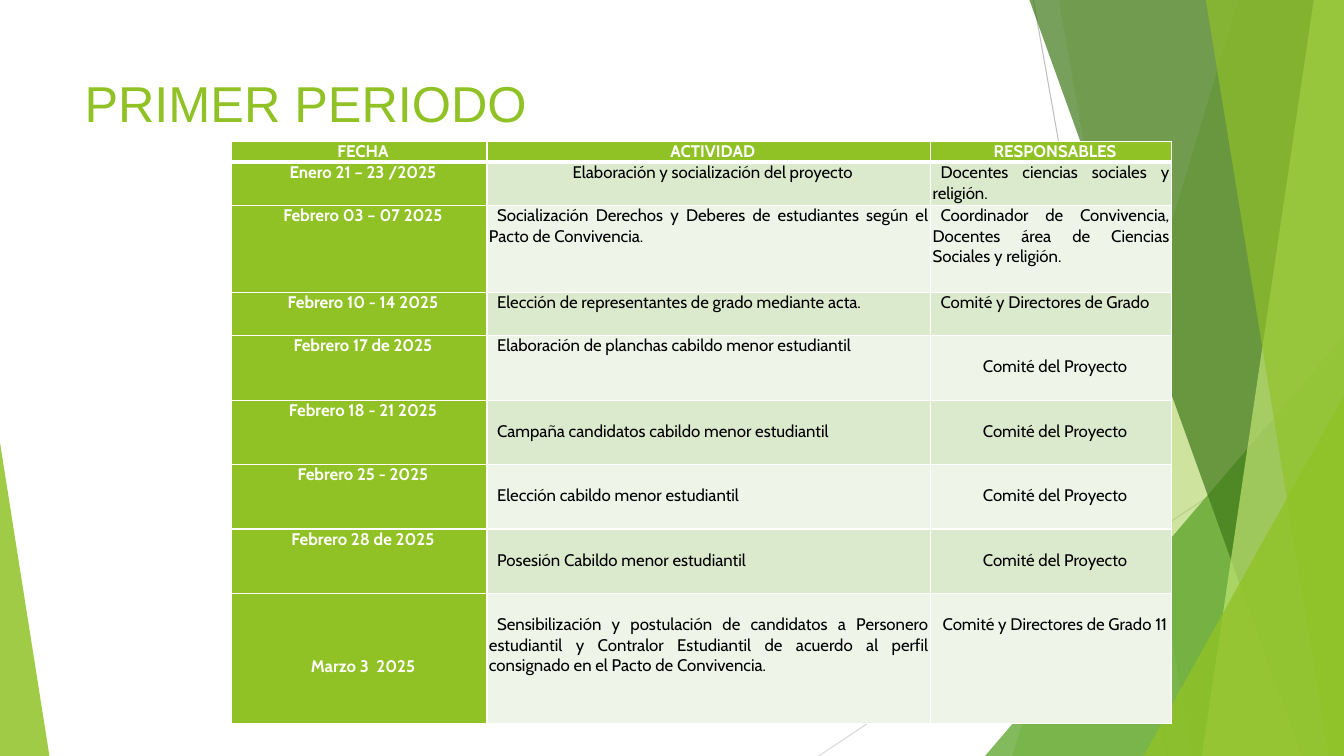
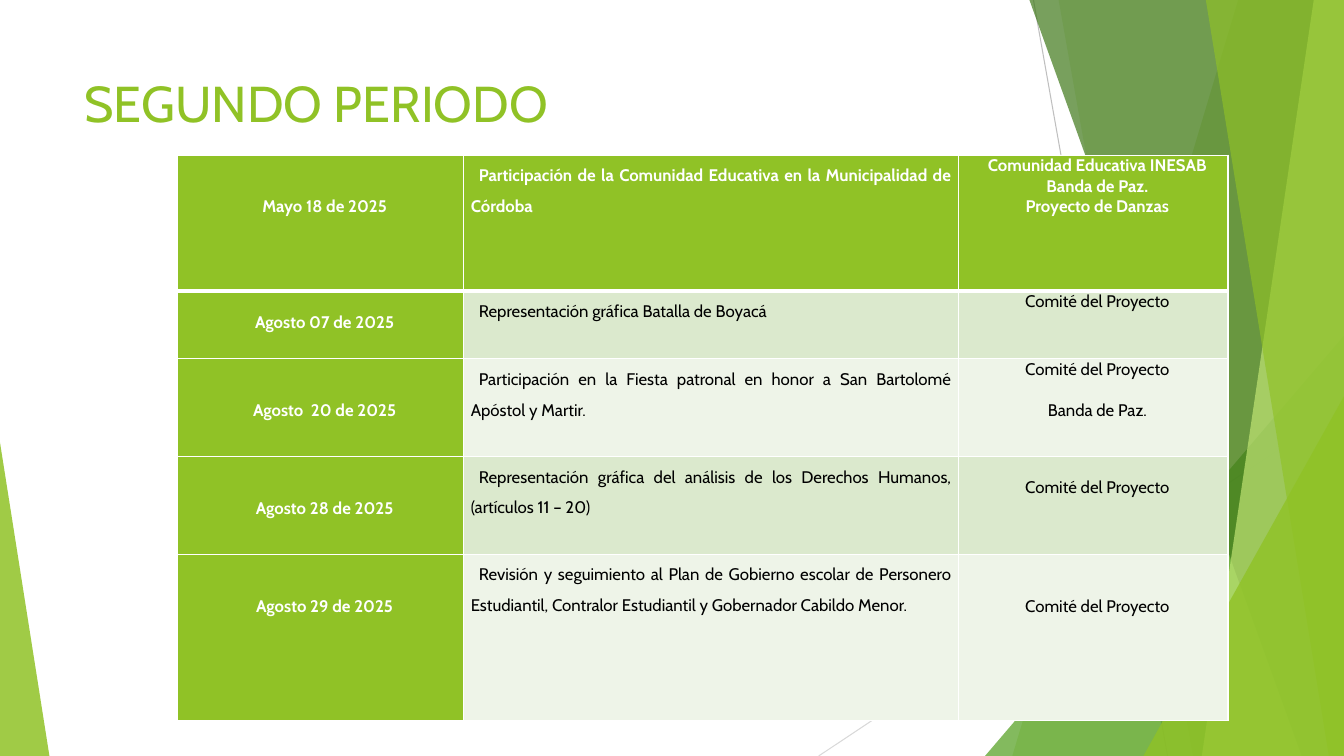
from dataclasses import dataclass

from lxml import etree
from pptx import Presentation
from pptx.dml.color import RGBColor
from pptx.enum.shapes import MSO_CONNECTOR, MSO_SHAPE
from pptx.enum.text import PP_ALIGN
from pptx.oxml.ns import qn
from pptx.util import Inches, Pt

CENTER, JUSTIFY = PP_ALIGN.CENTER, PP_ALIGN.JUSTIFY
STRAIGHT = MSO_CONNECTOR.STRAIGHT
TRIANGLE = MSO_SHAPE.ISOSCELES_TRIANGLE

WIDTH, HEIGHT = 13.33, 7.5
LIME, WHITE, BLACK = "90C226", "FFFFFF", "000000"
BAND_FILLS = ["EEF4E8", "DBE9CD"]
BODY_FONT = "Cabin"
LINE_HEIGHT = 14.8

GUIDE_LINES = [
    ((10.25, 0), (11.58, HEIGHT), "BFBFBF"),
    ((WIDTH, 4.03), (8.12, HEIGHT), "D9D9D9"),
]
BACK_BANDS = [(12.28, 10.04, LIME, 30), (10.5, 11.83, LIME, 20)]
FRONT_BANDS = [
    (10.21, 12.91, "3F7819", 70),
    (13.03, 11.92, "C0E474", 70),
    (11.96, 13.18, LIME, 65),
]
BACK_TRIANGLE = (9.77, 3.33, 3.56, 1, "54A021", 72)
FRONT_TRIANGLES = [
    (11.34, 3.93, 1.99, 1, LIME, 80),
    (0, 4.39, 0.49, 0, LIME, 85),
]


@dataclass
class Entry:
    """Text of a table cell, with the lines left free above and between its paragraphs."""

    text: str
    lines_above: int = 0
    lines_between: int = 0
    alignment: PP_ALIGN = CENTER
    spacing: float = 1.0


def justified(text, lines_above=0, spacing=1.0):
    """Return a justified entry."""
    return Entry(text, lines_above, alignment=JUSTIFY, spacing=spacing)


def spaced(text):
    """Return a justified entry with wide line spacing."""
    return justified(text, spacing=1.5)


COMMITTEE = "Comité del Proyecto"

PERIODS = [
    {
        "title": "PRIMER PERIODO",
        "title_font": "Arial",
        "origin": (2.29, 1.4),
        "columns": [2.54, 4.4, 2.39],
        "row_heights": [0.21, 0.43, 0.86, 0.43, 0.64, 0.64, 0.64, 0.64, 1.29],
        "side_margin": 0.02,
        "rows": [
            (Entry("FECHA"), Entry("ACTIVIDAD"), Entry("RESPONSABLES")),
            (
                Entry("Enero 21 – 23 /2025"),
                Entry("Elaboración y socialización del proyecto"),
                justified("Docentes ciencias sociales y religión."),
            ),
            (
                Entry("Febrero 03 – 07 2025"),
                justified("Socialización Derechos y Deberes de estudiantes según el Pacto de Convivencia."),
                justified("Coordinador de Convivencia, Docentes área de Ciencias Sociales y religión."),
            ),
            (
                Entry("Febrero 10 - 14 2025"),
                justified("Elección de representantes de grado mediante acta."),
                justified("Comité y Directores de Grado"),
            ),
            (
                Entry("Febrero 17 de 2025"),
                justified("Elaboración de planchas cabildo menor estudiantil"),
                Entry(COMMITTEE, 1),
            ),
            (
                Entry("Febrero 18 - 21 2025"),
                justified("Campaña candidatos cabildo menor estudiantil", 1),
                Entry(COMMITTEE, 1),
            ),
            (
                Entry("Febrero 25 - 2025"),
                justified("Elección cabildo menor estudiantil", 1),
                Entry(COMMITTEE, 1),
            ),
            (
                Entry("Febrero 28 de 2025"),
                justified("Posesión Cabildo menor estudiantil", 1),
                Entry(COMMITTEE, 1),
            ),
            (
                Entry("Marzo 3  2025", 3),
                justified(
                    "Sensibilización y postulación de candidatos a Personero estudiantil y Contralor "
                    "Estudiantil de acuerdo al perfil consignado en el Pacto de Convivencia.", 1),
                Entry("Comité y Directores de Grado 11", 1),
            ),
        ],
    },
    {
        "title": "SEGUNDO PERIODO",
        "title_font": BODY_FONT,
        "origin": (1.76, 1.54),
        "columns": [2.84, 4.91, 2.67],
        "row_heights": [1.35, 0.67, 0.97, 0.97, 1.65],
        "side_margin": 0.07,
        "rows": [
            (
                Entry("Mayo 18 de 2025", 2),
                spaced("Participación de la Comunidad Educativa en la Municipalidad de Córdoba"),
                Entry("Comunidad Educativa INESAB\nBanda de Paz.\nProyecto de Danzas"),
            ),
            (
                Entry("Agosto 07 de 2025", 1),
                spaced("Representación gráfica Batalla de Boyacá"),
                Entry(COMMITTEE),
            ),
            (
                Entry("Agosto  20 de 2025", 2),
                spaced("Participación en la Fiesta patronal en honor a San Bartolomé Apóstol y Martir."),
                Entry(COMMITTEE + "\nBanda de Paz.", lines_between=1),
            ),
            (
                Entry("Agosto 28 de 2025", 2),
                spaced("Representación gráfica del análisis de los Derechos Humanos, (artículos 11 – 20)"),
                Entry(COMMITTEE, 1),
            ),
            (
                Entry("Agosto 29 de 2025", 2),
                spaced(
                    "Revisión y seguimiento al Plan de Gobierno escolar de Personero Estudiantil, "
                    "Contralor Estudiantil y Gobernador Cabildo Menor."),
                Entry(COMMITTEE, 2),
            ),
        ],
    },
]


def color(value):
    """Turn a hex string into a colour."""
    return RGBColor.from_string(value)


def paint(shape, fill, opacity):
    """Give a shape a translucent fill without line or shadow."""
    shape.shadow.inherit = False
    shape.line.fill.background()
    shape.fill.solid()
    shape.fill.fore_color.rgb = color(fill)
    tint = shape._element.spPr.find(qn("a:solidFill"))[0]
    etree.SubElement(tint, qn("a:alpha"), val=str(opacity * 1000))


def add_band(slide, top_x, bottom_x, fill, opacity):
    """Draw a slanted band that reaches the right edge of the slide."""
    builder = slide.shapes.build_freeform(Inches(top_x), 0)
    corners = [(WIDTH, 0), (WIDTH, HEIGHT), (bottom_x, HEIGHT)]
    builder.add_line_segments([(Inches(x), Inches(y)) for x, y in corners])
    paint(builder.convert_to_shape(), fill, opacity)


def add_triangle(slide, left, top, width, apex, fill, opacity):
    """Draw a triangle that stands on the bottom edge of the slide."""
    shape = slide.shapes.add_shape(
        TRIANGLE, Inches(left), Inches(top), Inches(width), Inches(HEIGHT - top))
    shape.adjustments[0] = apex
    paint(shape, fill, opacity)


def add_background(slide):
    """Draw the guide lines, bands and triangles shared by all slides."""
    for start, end, stroke in GUIDE_LINES:
        points = [Inches(value) for value in start + end]
        connector = slide.shapes.add_connector(STRAIGHT, *points)
        connector.line.color.rgb = color(stroke)
        connector.line.width = Pt(0.75)
        etree.SubElement(connector._element.spPr, qn("a:effectLst"))
    for band in BACK_BANDS:
        add_band(slide, *band)
    add_triangle(slide, *BACK_TRIANGLE)
    for band in FRONT_BANDS:
        add_band(slide, *band)
    for triangle in FRONT_TRIANGLES:
        add_triangle(slide, *triangle)


def add_title(slide, text, font_name):
    """Write the slide title."""
    box = slide.shapes.add_textbox(Inches(0.74), Inches(0.67), Inches(9.4), Inches(1.44))
    box.text_frame.word_wrap = True
    paragraph = box.text_frame.paragraphs[0]
    paragraph.text = text
    paragraph.font.size = Pt(36)
    paragraph.font.name = font_name
    paragraph.font.color.rgb = color(LIME)


def set_borders(cell, row_index):
    """Draw white cell borders, thick between the header and the body."""
    properties = cell._tc.get_or_add_tcPr()
    thick_side = {0: "lnB", 1: "lnT"}.get(row_index)
    for side in ("lnL", "lnR", "lnT", "lnB"):
        width = Pt(3 if side == thick_side else 1)
        border = etree.SubElement(properties, qn("a:" + side), w=str(width))
        fill = etree.SubElement(border, qn("a:solidFill"))
        etree.SubElement(fill, qn("a:srgbClr"), val=WHITE)


def fill_cell(cell, entry, row_index, column_index, side_margin):
    """Write and style one table cell."""
    accented = row_index == 0 or column_index == 0
    set_borders(cell, row_index)
    cell.fill.solid()
    cell.fill.fore_color.rgb = color(LIME if accented else BAND_FILLS[row_index % 2])
    cell.margin_left = cell.margin_right = Inches(side_margin)
    cell.margin_top = Pt(entry.lines_above * LINE_HEIGHT)
    cell.margin_bottom = 0
    cell.text = entry.text
    for index, paragraph in enumerate(cell.text_frame.paragraphs):
        paragraph.alignment = entry.alignment
        paragraph.line_spacing = entry.spacing
        if index:
            paragraph.space_before = Pt(entry.lines_between * LINE_HEIGHT)
        paragraph._p.get_or_add_pPr().set("indent", str(Inches(0.08)))
        paragraph.font.size = Pt(12)
        paragraph.font.name = BODY_FONT
        paragraph.font.bold = accented
        paragraph.font.color.rgb = color(WHITE if accented else BLACK)


def add_schedule(slide, period):
    """Draw the table of activities."""
    columns, heights = period["columns"], period["row_heights"]
    left, top = period["origin"]
    table = slide.shapes.add_table(
        len(heights), len(columns), Inches(left), Inches(top),
        Inches(sum(columns)), Inches(sum(heights))).table
    for column, width in zip(table.columns, columns):
        column.width = Inches(width)
    for row, height in zip(table.rows, heights):
        row.height = Inches(height)
    for row_index, entries in enumerate(period["rows"]):
        for column_index, entry in enumerate(entries):
            fill_cell(table.cell(row_index, column_index), entry,
                      row_index, column_index, period["side_margin"])


def main():
    """Build and save the presentation."""
    presentation = Presentation()
    presentation.slide_width = Inches(WIDTH)
    presentation.slide_height = Inches(HEIGHT)
    for period in PERIODS:
        slide = presentation.slides.add_slide(presentation.slide_layouts[6])
        add_background(slide)
        add_title(slide, period["title"], period["title_font"])
        add_schedule(slide, period)
    presentation.save("out.pptx")


if __name__ == "__main__":
    main()
